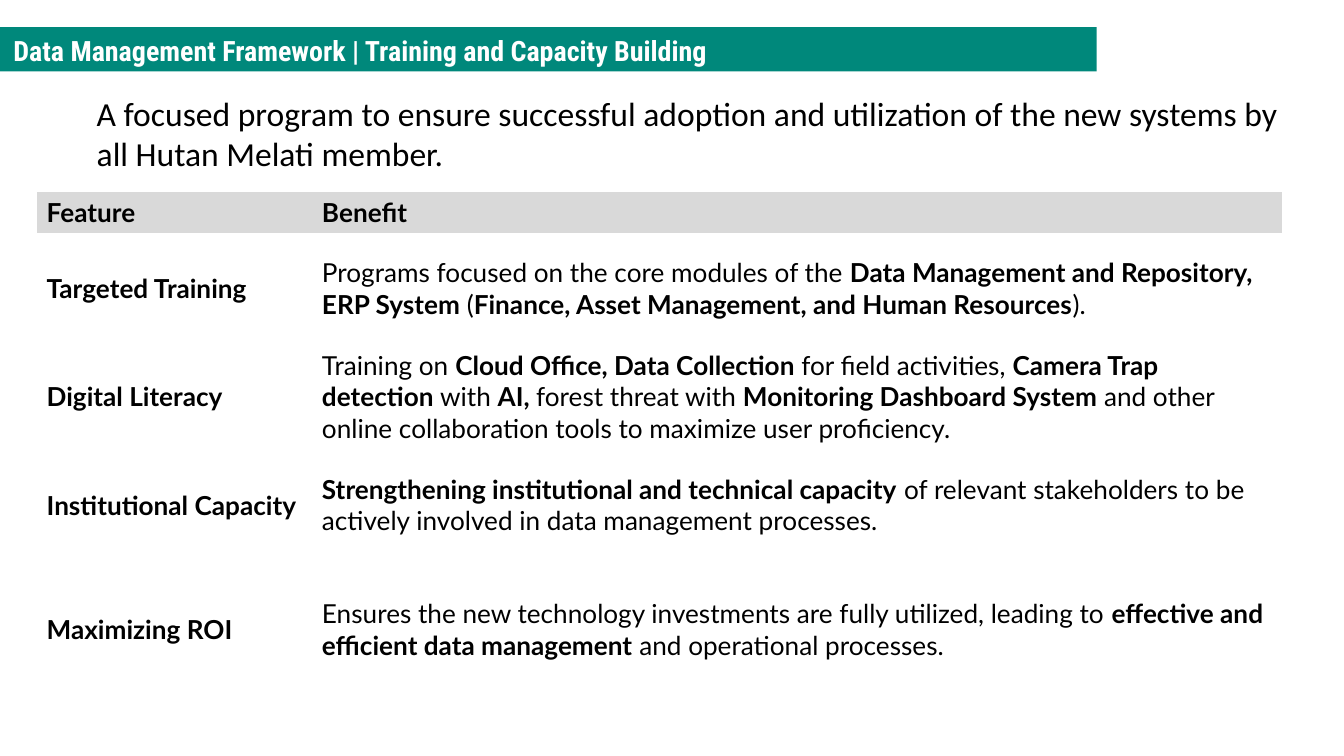
from pptx import Presentation
from pptx.dml.color import RGBColor
from pptx.enum.shapes import MSO_SHAPE
from pptx.enum.text import MSO_ANCHOR, MSO_AUTO_SIZE, PP_ALIGN
from pptx.oxml.ns import qn
from pptx.util import Pt

RECT = MSO_SHAPE.RECTANGLE
TOP, MIDDLE = MSO_ANCHOR.TOP, MSO_ANCHOR.MIDDLE
LEFT = PP_ALIGN.LEFT
FIXED = MSO_AUTO_SIZE.NONE
PLAIN = "{2D5ABB26-0587-4C30-8999-92F81FD0307C}"  # no style, no grid

TEAL, GRAY, BLACK, WHITE = "00887B", "D9D9D9", "000000", "FFFFFF"

HEAD = "Data Management Framework | Training and Capacity Building"
LEAD = ("A focused program to ensure successful adoption and utilization "
        "of the new systems by all Hutan Melati member.")

# Text between ** marks is bold
ROWS = [
    ("**Feature**", "**Benefit**"),
    ("**Targeted Training**",
     "Programs focused on the core modules of the **Data Management and "
     "Repository, ERP System** (**Finance, Asset Management, and Human "
     "Resources**)."),
    ("**Digital Literacy**",
     "Training on **Cloud Office, Data Collection **for field activities, "
     "**Camera Trap detection **with **AI, **forest threat with **Monitoring "
     "Dashboard System** and other online collaboration tools to maximize "
     "user proficiency."),
    ("**Institutional Capacity**",
     "**Strengthening institutional and technical capacity** of relevant "
     "stakeholders to be actively involved in data management processes."),
    ("**Maximizing ROI**",
     "Ensures the new technology investments are fully utilized, leading to "
     "**effective and efficient data management** and operational processes."),
]
COLS = [147.5, 519.5]
TALL = [21.6, 60, 56, 60, 73.5]


def color(code):
    return RGBColor.from_string(code)


def apply(item, **values):
    for name, value in values.items():
        setattr(item, name, value)


class Page:
    title = dict(name="Roboto Condensed", size=Pt(15), bold=True)
    body = dict(name="Calibri", size=Pt(18), bold=False)
    cell = dict(name="Lato", size=Pt(14))

    def __init__(self, deck):
        self.slide = deck.slides.add_slide(deck.slide_layouts[1])
        self.shapes = self.slide.shapes

    def bar(self, box, fill):
        bar = self.shapes.add_shape(RECT, *map(Pt, box))
        bar.shadow.inherit = False
        bar.fill.solid()
        bar.fill.fore_color.rgb = color(fill)
        bar.line.fill.background()
        # Place the bar behind the title
        self.shapes.title.element.addprevious(bar.element)

    def holder(self, index, text, box, style, ink):
        shape = self.slide.placeholders[index]
        left, top, width, height = map(Pt, box)
        apply(shape, left=left, top=top, width=width, height=height)
        frame = shape.text_frame
        frame.text = text
        apply(frame, word_wrap=True, auto_size=FIXED, vertical_anchor=TOP)
        para = frame.paragraphs[0]
        props = para._p.get_or_add_pPr()
        props.set("marL", "0")
        props.set("indent", "0")
        props.get_or_add_buNone() if hasattr(props, "get_or_add_buNone") \
            else props.append(props.makeelement(qn("a:buNone"), {}))
        apply(para, alignment=LEFT, space_before=Pt(0), line_spacing=1.0)
        font = para.runs[0].font
        apply(font, **style)
        font.color.rgb = color(ink)

    def rich(self, para, text):
        for i, part in enumerate(text.split("**")):
            if part:
                run = para.add_run()
                run.text = part
                apply(run.font, bold=i % 2 == 1, **self.cell)
                run.font.color.rgb = color(BLACK)

    def table(self, rows, left, top, cols, tall):
        frame = self.shapes.add_table(len(rows), len(cols), Pt(left), Pt(top),
                                      Pt(sum(cols)), Pt(sum(tall)))
        table = frame.table
        apply(table, first_row=False, horz_banding=False)
        table._tbl.tblPr.find(qn("a:tableStyleId")).text = PLAIN
        for col, width in zip(table.columns, cols):
            col.width = Pt(width)
        for r, (row, height) in enumerate(zip(rows, tall)):
            table.rows[r].height = Pt(height)
            for c, text in enumerate(row):
                cell = table.cell(r, c)
                apply(cell, vertical_anchor=MIDDLE,
                      margin_left=Pt(5), margin_right=Pt(5),
                      margin_top=Pt(2.4), margin_bottom=Pt(2.4))
                if r == 0:
                    cell.fill.solid()
                    cell.fill.fore_color.rgb = color(GRAY)
                else:
                    cell.fill.background()
                self.rich(cell.text_frame.paragraphs[0], text)


def main():
    deck = Presentation()
    apply(deck, slide_width=Pt(720), slide_height=Pt(405))
    page = Page(deck)

    # Title band
    page.bar((0, 14.5, 587.5, 23.8), TEAL)
    page.holder(0, HEAD, (0, 14.5, 711, 25), page.title, WHITE)

    # Lead sentence
    page.holder(1, LEAD, (44.6, 46, 667, 51), page.body, BLACK)

    # Features and benefits
    page.table(ROWS, 20, 103, COLS, TALL)

    deck.save("out.pptx")


if __name__ == "__main__":
    main()
